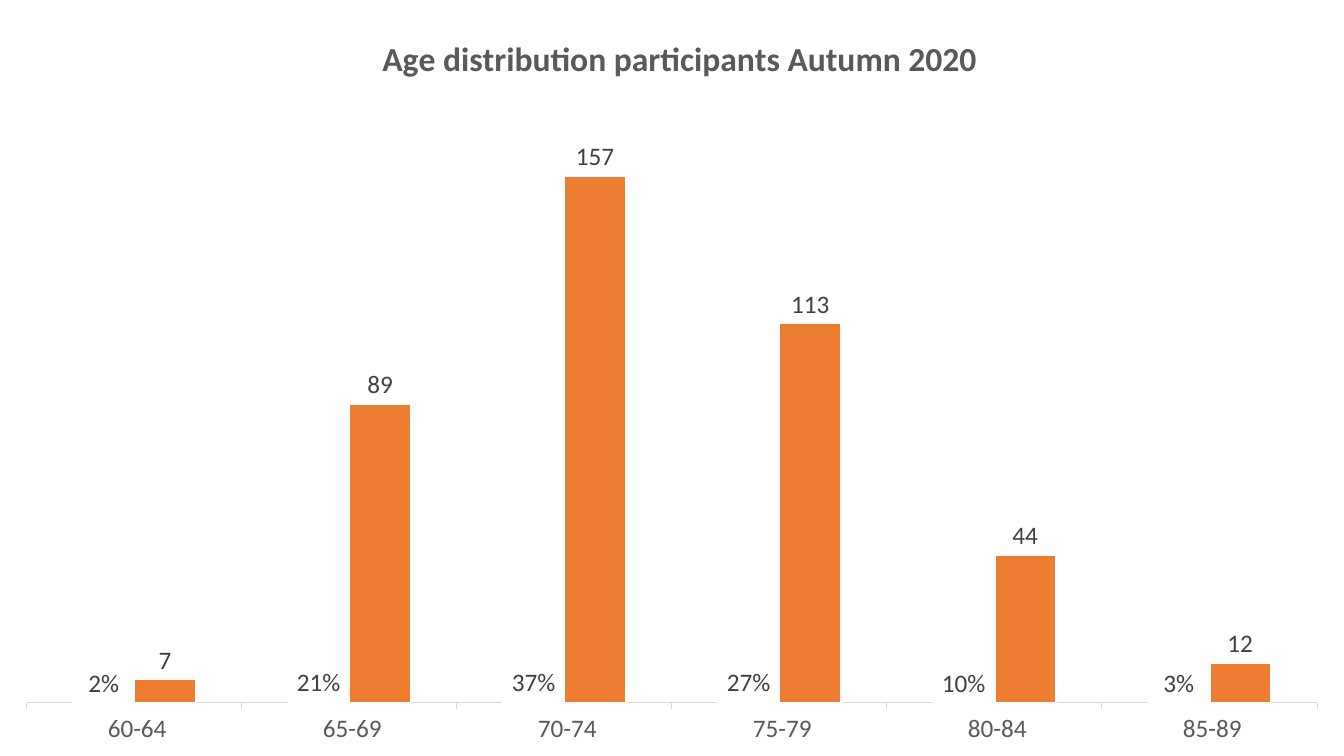
from pptx import Presentation
from pptx.chart.data import CategoryChartData
from pptx.dml.color import RGBColor
from pptx.enum.chart import XL_CHART_TYPE as ChartType
from pptx.enum.chart import XL_LABEL_POSITION as LabelPos
from pptx.enum.chart import XL_TICK_MARK as Tick
from pptx.oxml import parse_xml
from pptx.oxml.ns import nsdecls, qn
from pptx.util import Cm, Pt

BLACK = RGBColor(0x00, 0x00, 0x00)
WHITE = RGBColor(0xFF, 0xFF, 0xFF)
GREY = RGBColor(0x59, 0x59, 0x59)
DARK_GREY = RGBColor(0x40, 0x40, 0x40)
LIGHT_GREY = RGBColor(0xD9, 0xD9, 0xD9)
BLUE = RGBColor(0x44, 0x72, 0xC4)
ORANGE = RGBColor(0xED, 0x7D, 0x31)

FONT = "Calibri"
WIDTH, HEIGHT = Cm(33.87), Cm(19.05)

AGE_GROUPS = [f" {age}-{age + 4}" for age in range(60, 90, 5)]
SHARES = [0.02, 0.21, 0.37, 0.27, 0.1, 0.03]
COUNTS = [7, 89, 157, 113, 44, 12]


def style_font(font, size=18, color=GREY, bold=False):
    font.name = FONT
    font.size = Pt(size)
    font.bold = bold
    font.color.rgb = color


def write_text(tf, text, **style):
    p = tf.paragraphs[0]
    r = p.add_run()
    r.text = text
    style_font(r.font, **style)


def place(element, index, target=None, **fractions):
    for old in element.findall(qn("c:layout")):
        element.remove(old)
    inner = f'<c:layoutTarget val="{target}"/>' if target else ""
    modes = "".join(f'<c:{k}Mode val="edge"/>' for k in "xy")
    values = "".join(f'<c:{k} val="{v}"/>' for k, v in fractions.items())
    element.insert(index, parse_xml(
        f'<c:layout {nsdecls("c")}><c:manualLayout>'
        f"{inner}{modes}{values}</c:manualLayout></c:layout>"))


def style_series(series, color, number_format):
    series.format.fill.solid()
    series.format.fill.fore_color.rgb = color
    series.format.line.color.rgb = WHITE
    series.format.line.width = Pt(1.5)
    series.invert_if_negative = False
    labels = series.data_labels
    labels.show_value = True
    labels.position = LabelPos.OUTSIDE_END
    labels.number_format = number_format
    labels.number_format_is_linked = False
    style_font(labels.font, color=DARK_GREY)


def style_axes(chart):
    ages = chart.category_axis
    ages.major_tick_mark = Tick.OUTSIDE
    ages.minor_tick_mark = Tick.NONE
    ages.has_major_gridlines = False
    ages.format.line.color.rgb = LIGHT_GREY
    ages.format.line.width = Pt(0.75)
    style_font(ages.tick_labels.font)
    values = chart.value_axis
    values.minimum_scale, values.maximum_scale = 0, 180
    values.has_major_gridlines = False
    values.tick_labels.number_format = "0%"
    values.tick_labels.number_format_is_linked = False
    values.visible = False


def add_age_chart(slide):
    data = CategoryChartData()
    data.categories = AGE_GROUPS
    data.add_series("Series 1", SHARES, "0%")
    data.add_series("Series 2", COUNTS)
    chart = slide.shapes.add_chart(
        ChartType.COLUMN_CLUSTERED, 0, 0, WIDTH, HEIGHT, data).chart
    style_font(chart.font, size=10, color=BLACK)
    chart.has_legend = False

    chart.has_title = True
    title = chart.chart_title
    write_text(title.text_frame, "Age distribution participants Autumn 2020",
               size=24, bold=True)
    place(title.element, 1, x=0.28, y=0.04)

    plot = chart.plots[0]
    plot.gap_width = 150
    plot.overlap = 0
    plot.vary_by_categories = False
    for series, color, fmt in zip(plot.series, (BLUE, ORANGE),
                                  ("0%", "General")):
        style_series(series, color, fmt)
    style_axes(chart)
    plot_area = chart.element.find(qn("c:chart")).find(qn("c:plotArea"))
    place(plot_area, 0, target="inner", x=0.02, y=0.13, w=0.96, h=0.8)


def main():
    prs = Presentation()
    prs.slide_width, prs.slide_height = WIDTH, HEIGHT
    slide = prs.slides.add_slide(prs.slide_layouts[6])
    add_age_chart(slide)
    prs.save("out.pptx")


if __name__ == "__main__":
    main()
